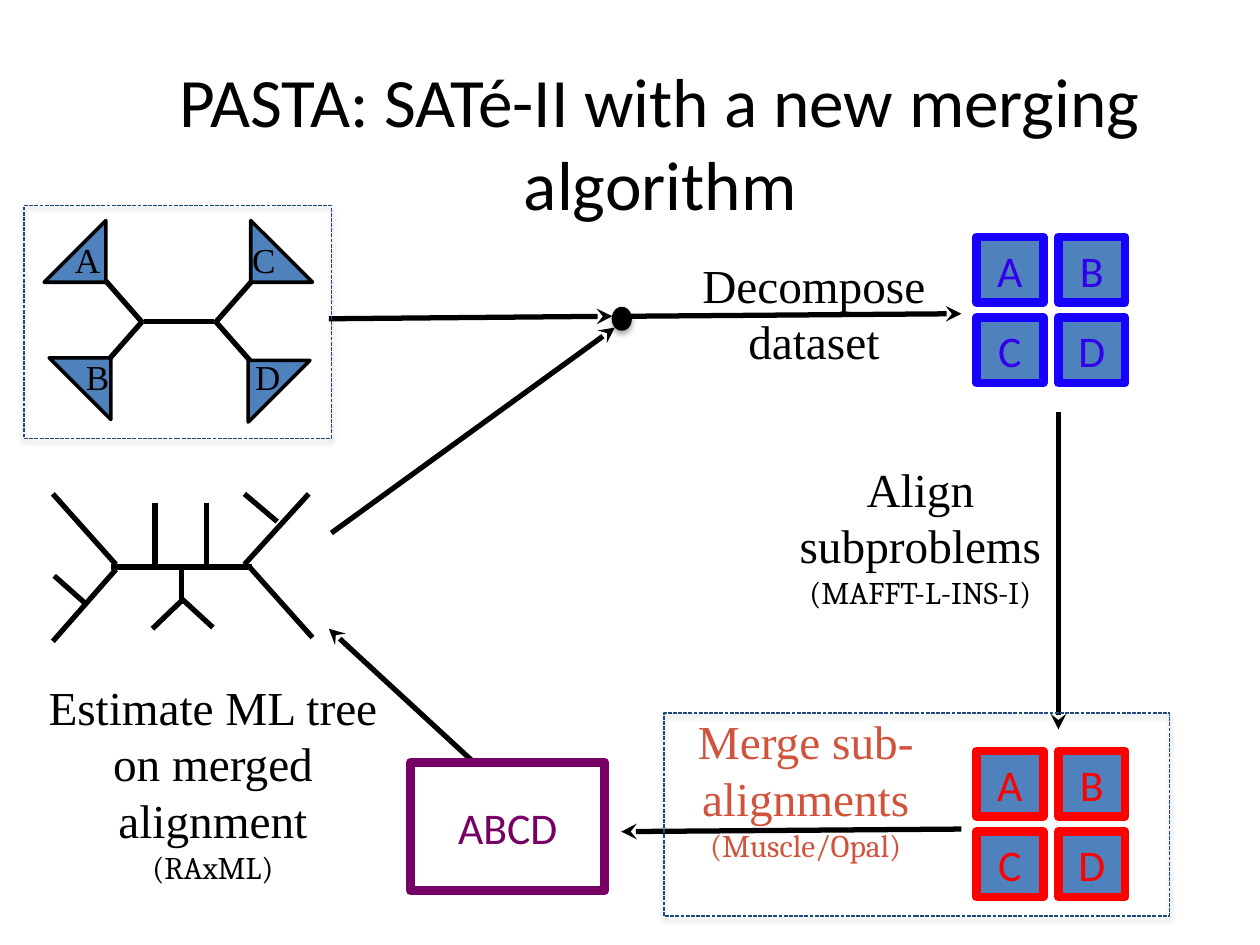
"""Build the slide on the PASTA alignment cycle."""
from dataclasses import dataclass

import lxml.etree
import pptx
import pptx.dml.color
import pptx.enum.dml
import pptx.enum.shapes
import pptx.enum.text
import pptx.oxml.ns
import pptx.util

Inches, Pt = pptx.util.Inches, pptx.util.Pt
SHAPE = pptx.enum.shapes.MSO_SHAPE
BLACK, BLUE, NAVY, RED, PURPLE, RUST = "000000", "4F81BD", "1F497D", "FF0000", "770065", "D2533C"
SERIF, SANS, NOTE = "Times New Roman", "Calibri", "Cambria"


@dataclass
class Run:
    text: str
    size: float
    font: str
    color: str = BLACK


@dataclass
class Label:
    box: tuple[float, float, float, float]
    runs: list[Run]
    before: float = 0


@dataclass
class Line:
    start: tuple[float, float]
    end: tuple[float, float]
    arrow: bool = False


@dataclass
class Clade:
    name: str
    corner: tuple[float, float]
    rotation: int
    label: tuple[float, float]


CLADES = [
    Clade("A", (0.35, 1.75), 270, (0.51, 1.88)),
    Clade("B", (0.39, 2.84), 180, (0.59, 2.81)),
    Clade("C", (1.99, 1.75), 0, (1.91, 1.88)),
    Clade("D", (1.97, 2.86), 90, (1.94, 2.81)),
]
GUIDE_TREE = [
    Line((0.84, 2.23), (1.13, 2.56)),
    Line((0.84, 2.88), (1.13, 2.55)),
    Line((2, 2.23), (1.71, 2.56)),
    Line((2, 2.88), (1.71, 2.55)),
    Line((1.14, 2.55), (1.7, 2.55)),
]
ML_TREE = [
    Line((0.42, 3.92), (0.92, 4.48)),
    Line((0.42, 5.09), (0.92, 4.52)),
    Line((2.45, 3.92), (1.94, 4.48)),
    Line((2.48, 5.06), (1.98, 4.5)),
    Line((0.88, 4.5), (2, 4.5)),
    Line((1.23, 3.99), (1.23, 4.52)),
    Line((1.64, 3.99), (1.64, 4.52)),
    Line((1.94, 3.92), (2.2, 4.14)),
    Line((0.43, 4.57), (0.69, 4.8)),
    Line((1.44, 4.49), (1.44, 4.76)),
    Line((1.44, 4.75), (1.69, 4.98)),
    Line((1.46, 4.75), (1.21, 4.99)),
]
ARROWS = [
    Line((2.61, 2.53), (4.86, 2.51), True),
    Line((5.01, 2.51), (7.63, 2.49), True),
    Line((8.4, 3.27), (8.4, 5.79), True),
    Line((7.63, 6.58), (4.93, 6.6), True),
    Line((3.76, 6.05), (2.61, 4.99), True),
    Line((2.63, 4.23), (4.88, 2.6), True),
]
STEPS = [
    Label((5.03, 2.02, 2.86, 0.92), [Run("Decompose dataset", 27, SERIF)]),
    Label((6.02, 3.79, 2.57, 0.92),
          [Run("Align subproblems", 27, SERIF), Run("(MAFFT-L-INS-I)", 18, NOTE)]),
    Label((5.26, 5.79, 2.27, 0.93),
          [Run("Merge sub-alignments", 27, SERIF, RUST), Run("(Muscle/Opal)", 18, NOTE, RUST)]),
    Label((0.23, 5.53, 2.92, 1.35),
          [Run("Estimate ML tree on merged alignment", 27, SERIF), Run("(RAxML)", 18, NOTE)]),
]


def rgb(value: str) -> pptx.dml.color.RGBColor:
    return pptx.dml.color.RGBColor.from_string(value)


def write(tf, runs: list[Run], before: float = 0, inset: float = 0) -> None:
    tf.word_wrap = True
    tf.auto_size = pptx.enum.text.MSO_AUTO_SIZE.NONE
    tf.vertical_anchor = pptx.enum.text.MSO_ANCHOR.MIDDLE
    tf.margin_left = tf.margin_right = Inches(inset)
    tf.margin_top = tf.margin_bottom = Inches(inset / 2)
    for i, run in enumerate(runs):
        p = tf.add_paragraph() if i else tf.paragraphs[0]
        p.alignment = pptx.enum.text.PP_ALIGN.CENTER
        p.space_before = Pt(before)
        r = p.add_run()
        r.text = run.text
        r.font.size = Pt(run.size)
        r.font.name = run.font
        r.font.color.rgb = rgb(run.color)


def add_label(s, label: Label) -> None:
    sp = s.shapes.add_textbox(*map(Inches, label.box))
    write(sp.text_frame, label.runs, label.before)


def add_line(s, line: Line) -> None:
    cx = s.shapes.add_connector(pptx.enum.shapes.MSO_CONNECTOR.STRAIGHT,
                                *map(Inches, line.start + line.end))
    cx.line.color.rgb = rgb(BLACK)
    cx.line.width = Pt(3)
    qn = pptx.oxml.ns.qn
    if line.arrow:
        lxml.etree.SubElement(cx.line._get_or_add_ln(), qn("a:tailEnd"), type="stealth")
    lxml.etree.SubElement(cx._element.spPr, qn("a:effectLst"))


def add_box(s, kind, box: tuple[float, ...], fill: str | None, line: str,
            width: float, shadow: bool = False):
    sp = s.shapes.add_shape(kind, *map(Inches, box))
    if fill:
        sp.fill.solid()
        sp.fill.fore_color.rgb = rgb(fill)
    else:
        sp.fill.background()
    sp.line.color.rgb = rgb(line)
    sp.line.width = Pt(width)
    if not shadow:
        sp.shadow.inherit = False
    return sp


def add_frame(s, box: tuple[float, ...]) -> None:
    sp = add_box(s, SHAPE.RECTANGLE, box, None, NAVY, 0.75, shadow=True)
    sp.line.dash_style = pptx.enum.dml.MSO_LINE.SQUARE_DOT


def add_subsets(s, top: float, line: str, color: str) -> None:
    for i, name in enumerate("ABCD"):
        row, col = divmod(i, 2)
        box = (7.75 + 0.65 * col, top + 0.64 * row, 0.53, 0.52)
        sp = add_box(s, SHAPE.RECTANGLE, box, BLUE, line, 5)
        write(sp.text_frame, [Run(name, 25, SANS, color)])


def add_clade(s, clade: Clade) -> None:
    sp = add_box(s, SHAPE.RIGHT_TRIANGLE, clade.corner + (0.49, 0.49), BLUE, BLACK, 2)
    sp.rotation = clade.rotation
    add_label(s, Label(clade.label + (0.37, 0.36), [Run(clade.name, 20, SERIF)], 11.8))


def main() -> None:
    prs = pptx.Presentation()
    prs.slide_width, prs.slide_height = Inches(10), Inches(7.5)
    s = prs.slides.add_slide(prs.slide_layouts[5])
    title = s.shapes.title
    title.left, title.top, title.width, title.height = map(Inches, (0.19, 0.58, 10.1, 1.08))
    write(title.text_frame, [Run("PASTA: SATé-II with a new merging algorithm", 39.6, SANS)],
          inset=0.1)

    for line in GUIDE_TREE + ML_TREE:
        add_line(s, line)
    for clade in CLADES:
        add_clade(s, clade)
    for line in ARROWS:
        add_line(s, line)
    for label in STEPS:
        add_label(s, label)
    add_subsets(s, 1.88, "1800FF", "3100ED")
    add_subsets(s, 5.96, RED, RED)
    merged = add_box(s, SHAPE.RECTANGLE, (3.26, 6.05, 1.54, 1.02), None, PURPLE, 5)
    write(merged.text_frame, [Run("ABCD", 25, SANS, PURPLE)])
    add_box(s, SHAPE.OVAL, (4.86, 2.44, 0.15, 0.18), BLACK, BLACK, 0.75, shadow=True)
    add_frame(s, (5.27, 5.66, 4.01, 1.61))
    add_frame(s, (0.19, 1.63, 2.44, 1.85))
    prs.save("out.pptx")


if __name__ == "__main__":
    main()
